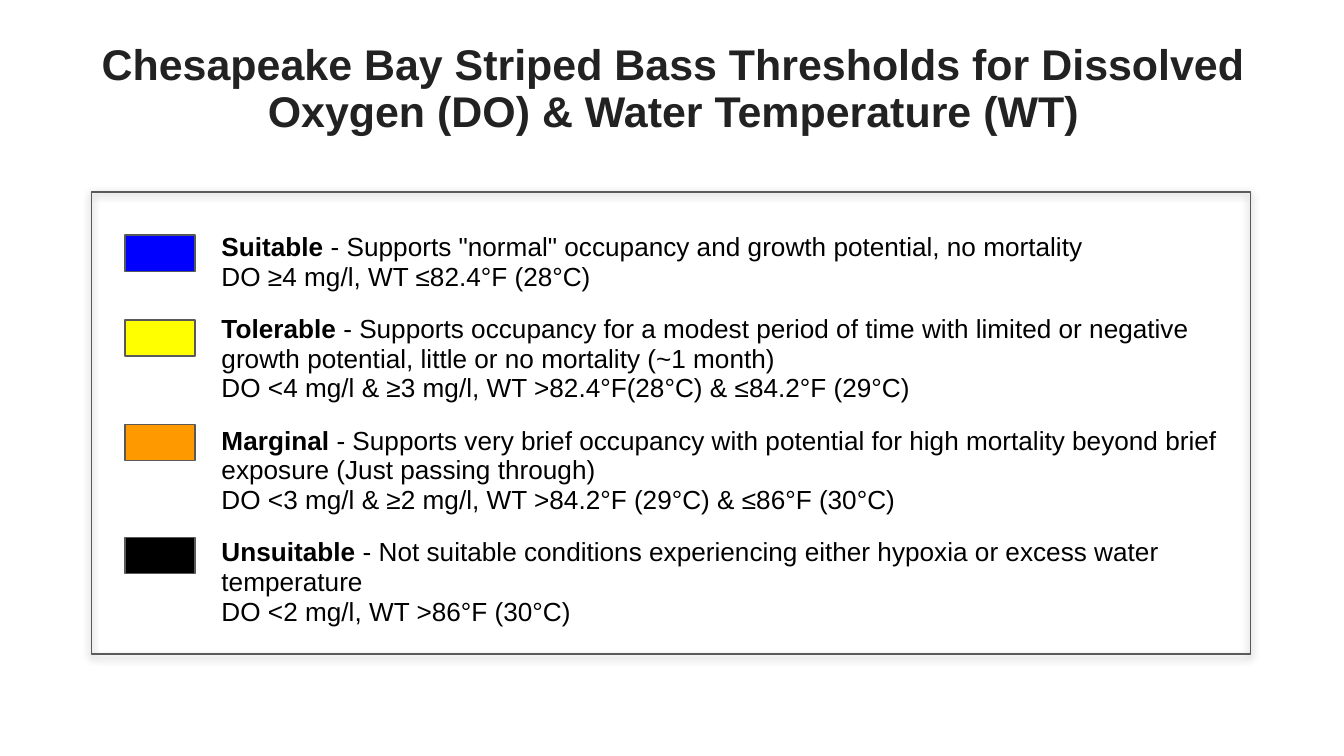
from copy import deepcopy
from dataclasses import dataclass

from lxml import etree
from pptx import Presentation
from pptx.dml.color import RGBColor
from pptx.enum.shapes import MSO_SHAPE as Shape
from pptx.enum.text import MSO_ANCHOR as Anchor, PP_ALIGN as Align
from pptx.oxml.ns import qn
from pptx.util import Pt

FONT = "Arial"
BORDER = "595959"


@dataclass
class Level:
    name: str
    meaning: str
    limits: str
    color: str
    top: float  # swatch top, in points


LEVELS = [
    Level("Suitable", ' - Supports "normal" occupancy and growth potential, no mortality ',
          "DO ≥4 mg/l, WT ≤82.4°F (28°C)", "0000FF", 126),
    Level("Tolerable", " - Supports occupancy for a modest period of time with limited or "
          "negative growth potential, little or no mortality (~1 month) ",
          "DO <4 mg/l & ≥3 mg/l, WT >82.4°F(28°C) & ≤84.2°F (29°C)", "FFFF00", 171.4),
    Level("Marginal", " - Supports very brief occupancy with potential for high mortality "
          "beyond brief exposure (Just passing through) ",
          "DO <3 mg/l & ≥2 mg/l, WT >84.2°F (29°C) & ≤86°F (30°C)", "FF9900", 227.5),
    Level("Unsuitable", " - Not suitable conditions experiencing either hypoxia or excess "
          "water temperature", "DO <2 mg/l, WT >86°F (30°C)", "000000", 288),
]


def rgb(color: str) -> RGBColor:
    return RGBColor.from_string(color)


def add_run(p, text: str, *, size: float = 14, color: str = "000000", bold: bool = False):
    r = p.add_run()
    r.text = text
    r.font.name, r.font.size, r.font.bold = FONT, Pt(size), bold
    r.font.color.rgb = rgb(color)
    return r


def add_break(p, r) -> None:
    """Break the line, keeping the format of run r."""
    p.add_line_break()
    p._p[-1].append(deepcopy(r._r.rPr))


def add_box(s, left: float, top: float, width: float, height: float, fill: str | None = None):
    sp = s.shapes.add_shape(Shape.RECTANGLE, Pt(left), Pt(top), Pt(width), Pt(height))
    sp.shadow.inherit = False
    if fill:
        sp.fill.solid()
        sp.fill.fore_color.rgb = rgb(fill)
    else:
        sp.fill.background()
    sp.line.color.rgb = rgb(BORDER)
    sp.line.width = Pt(0.75)
    return sp


def add_shadow(sp, *, blur: float, dist: float, alpha: int) -> None:
    """Cast a soft black shadow straight down."""
    effects = sp._element.spPr.find(qn("a:effectLst"))
    outer = etree.SubElement(effects, qn("a:outerShdw"), blurRad=str(Pt(blur)),
                             dist=str(Pt(dist)), dir="5400000", algn="bl", rotWithShape="0")
    black = etree.SubElement(outer, qn("a:srgbClr"), val="000000")
    etree.SubElement(black, qn("a:alpha"), val=str(alpha * 1000))


def add_text(s, left: float, top: float, width: float, height: float, anchor=Anchor.TOP):
    tf = s.shapes.add_textbox(Pt(left), Pt(top), Pt(width), Pt(height)).text_frame
    tf.word_wrap = True
    tf.vertical_anchor = anchor
    return tf


def main() -> None:
    prs = Presentation()
    prs.slide_width, prs.slide_height = Pt(720), Pt(405)
    s = prs.slides.add_slide(prs.slide_layouts[6])

    # Frame
    frame = add_box(s, 49.2, 102.8, 620.8, 247.6)
    add_shadow(frame, blur=4.5, dist=1.5, alpha=50)

    # Title
    p = add_text(s, 32.4, 18.7, 657.4, 59, Anchor.MIDDLE).paragraphs[0]
    p.alignment, p.line_spacing = Align.CENTER, 0.9
    add_run(p, "Chesapeake Bay Striped Bass Thresholds for Dissolved Oxygen (DO) "
            "& Water Temperature (WT)", size=23, color="222222", bold=True)

    # Thresholds and their colour key
    tf = add_text(s, 111.6, 121, 565.9, 265)
    for i, level in enumerate(LEVELS):
        p = tf.add_paragraph() if i else tf.paragraphs[0]
        p.line_spacing = 0.95
        p.space_before = Pt(12 if i else 0)
        add_run(p, level.name, bold=True)
        add_break(p, add_run(p, level.meaning))
        add_run(p, level.limits)
        add_box(s, 67, level.top, 37.4, 19.4, level.color)

    prs.save("out.pptx")


if __name__ == "__main__":
    main()
